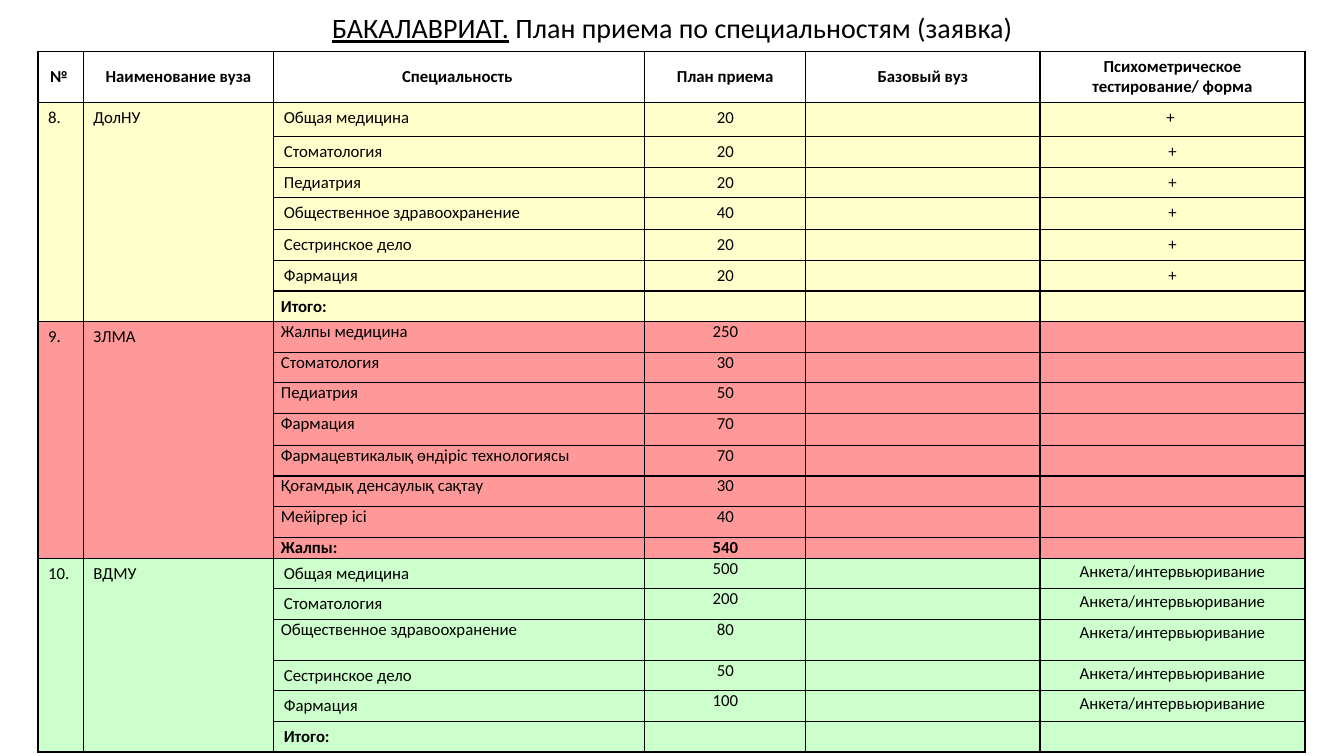
from dataclasses import dataclass
from lxml.etree import SubElement
from pptx import Presentation
from pptx.dml.color import RGBColor
from pptx.enum.text import MSO_ANCHOR, MSO_AUTO_SIZE, PP_ALIGN
from pptx.oxml.ns import qn
from pptx.util import Cm, Pt


@dataclass(frozen=True)
class Theme:
    font: str = "Calibri"
    title_size: int = 20
    body_size: int = 12
    border: int = 1
    ink: str = "000000"
    header: str = "FFFFFF"
    yellow: str = "FFFFCC"
    red: str = "FF9999"
    green: str = "CCFFCC"


@dataclass(frozen=True)
class Row:
    """Columns in narrow have small side margins, those in tight no top one either."""
    specialty: str
    plan: str = ""
    form: str = ""
    height: float = 0.77
    narrow: tuple = ()
    tight: tuple = ()


@dataclass(frozen=True)
class University:
    """Rows of one university; tight columns hold for all of them."""
    number: str
    name: str
    fill: str
    rows: tuple
    tight: tuple = ()
    align: PP_ALIGN = PP_ALIGN.LEFT
    form_spacing: float = 1.0


THEME = Theme()
NUMBER, NAME, SPECIALTY, PLAN, BASE, FORM = range(6)
COLUMN_WIDTHS = (1.14, 4.8, 9.35, 4.06, 5.9, 6.68)
HEADER_HEIGHT = 1.29
HEADERS = ("№ ", "Наименование вуза", "Специальность ", "План приема",
           "Базовый вуз", "Психометрическое тестирование/ форма")
INTERVIEW = "Анкета/интервьюривание"

UNIVERSITIES = (
    University("8.", "ДолНУ", THEME.yellow, (
        Row("Общая медицина", "20", "+ ", height=0.86),
        Row("Стоматология", "20", "+"),
        Row("Педиатрия", "20", "+"),
        Row("Общественное здравоохранение", "40", "+", height=0.81),
        Row("Сестринское дело", "20", "+"),
        Row("Фармация", "20", "+"),
        Row("Итого:", narrow=(SPECIALTY,)),
    )),
    University("9.", "ЗЛМА", THEME.red, (
        Row("Жалпы медицина", "250"),
        Row("Стоматология", "30"),
        Row("Педиатрия", "50"),
        Row("Фармация", "70", height=0.81),
        Row("Фармацевтикалық өндіріс технологиясы", "70"),
        Row("Қоғамдық денсаулық сақтау", "30"),
        Row("Мейіргер ісі", "40"),
        Row("Жалпы:", "540", height=0.53),
    ), tight=(SPECIALTY, PLAN, BASE, FORM), align=PP_ALIGN.JUSTIFY),
    University("10.", "ВДМУ", THEME.green, (
        Row("Общая медицина", "500", INTERVIEW),
        Row("Стоматология", "200", INTERVIEW),
        Row("Общественное здравоохранение", "80", INTERVIEW, height=1.03,
            tight=(SPECIALTY,)),
        Row("Сестринское дело", "50", INTERVIEW),
        Row("Фармация", "100", INTERVIEW),
        Row("Итого:"),
    ), tight=(PLAN, FORM), form_spacing=1.15),
)


def format_run(r, size, bold=False):
    r.font.name = THEME.font
    r.font.size = Pt(size)
    r.font.bold = bold
    r.font.color.rgb = RGBColor.from_string(THEME.ink)


def add_borders(cell):
    tc_pr = cell._tc.get_or_add_tcPr()
    for side in ("lnL", "lnR", "lnT", "lnB"):
        ln = SubElement(tc_pr, qn(f"a:{side}"), w=str(Pt(THEME.border)))
        fill = SubElement(ln, qn("a:solidFill"))
        SubElement(fill, qn("a:srgbClr"), val=THEME.ink)


def fill_cell(cell, text, fill, align, bold=False, narrow=False, tight=False):
    add_borders(cell)
    cell.fill.solid()
    cell.fill.fore_color.rgb = RGBColor.from_string(fill)
    if narrow or tight:
        cell.margin_left = cell.margin_right = Cm(0.18)
    if tight:
        cell.margin_top = cell.margin_bottom = 0
    p = cell.text_frame.paragraphs[0]
    p.alignment = align
    if text:
        p.text = text
        format_run(p.runs[0], THEME.body_size, bold)
    else:
        # An empty cell would otherwise stretch its row to the default size
        SubElement(p._p, qn("a:endParaRPr"), sz=str(THEME.body_size * 100))


def add_university(table, top, university):
    """Fills the rows from top on and returns the row below them."""
    for i, row in enumerate(university.rows, top):
        table.rows[i].height = Cm(row.height)
        first = i == top
        texts = (university.number if first else "",
                 university.name if first else "",
                 row.specialty, row.plan, "", row.form)
        for column, text in enumerate(texts):
            if column < SPECIALTY:
                align = PP_ALIGN.LEFT
            elif column == SPECIALTY:
                align = university.align
            else:
                align = PP_ALIGN.CENTER
            fill_cell(table.cell(i, column), text, university.fill, align,
                      bold=column >= SPECIALTY and row.specialty.endswith(":"),
                      narrow=column in row.narrow,
                      tight=column in university.tight + row.tight)
        if row.form and university.form_spacing != 1:
            p = table.cell(i, FORM).text_frame.paragraphs[0]
            p.line_spacing = university.form_spacing
    bottom = top + len(university.rows)
    for column in (NUMBER, NAME):
        table.cell(top, column).merge(table.cell(bottom - 1, column))
    return bottom


def add_plan_table(slide, left, top):
    heights = [HEADER_HEIGHT] + [r.height for u in UNIVERSITIES for r in u.rows]
    frame = slide.shapes.add_table(
        len(heights), len(COLUMN_WIDTHS), Cm(left), Cm(top),
        Cm(sum(COLUMN_WIDTHS)), Cm(sum(heights)))
    table = frame.table
    table.first_row = table.horz_banding = False
    for column, width in zip(table.columns, COLUMN_WIDTHS):
        column.width = Cm(width)
    table.rows[0].height = Cm(HEADER_HEIGHT)
    for column, text in enumerate(HEADERS):
        cell = table.cell(0, column)
        fill_cell(cell, text, THEME.header, PP_ALIGN.CENTER, bold=True)
        cell.vertical_anchor = MSO_ANCHOR.MIDDLE
    next_row = 1
    for university in UNIVERSITIES:
        next_row = add_university(table, next_row, university)


def set_title(slide, left, top, width, height):
    title = slide.shapes.title
    title.left, title.top = Cm(left), Cm(top)
    title.width, title.height = Cm(width), Cm(height)
    tf = title.text_frame
    tf.word_wrap = True
    tf.auto_size = MSO_AUTO_SIZE.NONE
    tf.vertical_anchor = MSO_ANCHOR.MIDDLE
    p = tf.paragraphs[0]
    p.alignment = PP_ALIGN.CENTER
    p.line_spacing = 0.9
    for text, underlined in (("БАКАЛАВРИАТ.", True),
                             (" План приема по специальностям (заявка)", False)):
        r = p.add_run()
        r.text = text
        format_run(r, THEME.title_size)
        r.font.underline = underlined


def main():
    prs = Presentation()
    prs.slide_width, prs.slide_height = Cm(33.87), Cm(19.05)
    s = prs.slides.add_slide(prs.slide_layouts[5])
    set_title(s, 2.34, -0.05, 29.21, 1.6)
    add_plan_table(s, 0.96, 1.29)
    prs.save("out.pptx")


if __name__ == "__main__":
    main()
